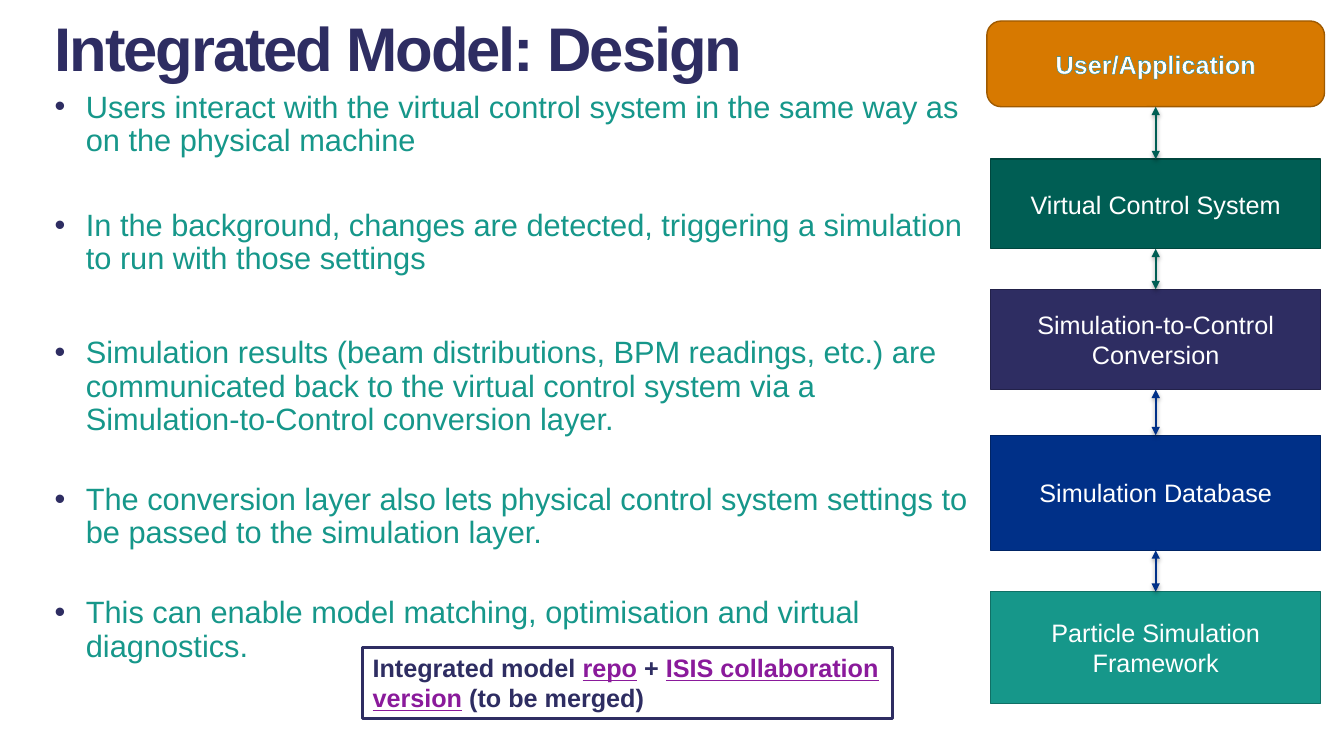
from lxml import etree
from pptx import Presentation
from pptx.dml.color import RGBColor
from pptx.enum.shapes import MSO_CONNECTOR, MSO_SHAPE
from pptx.enum.text import MSO_ANCHOR, MSO_AUTO_SIZE, PP_ALIGN
from pptx.oxml import parse_xml
from pptx.util import Cm, Pt

STRAIGHT = MSO_CONNECTOR.STRAIGHT
RECTANGLE, ROUNDED = MSO_SHAPE.RECTANGLE, MSO_SHAPE.ROUNDED_RECTANGLE
TOP, MIDDLE, BOTTOM = MSO_ANCHOR.TOP, MSO_ANCHOR.MIDDLE, MSO_ANCHOR.BOTTOM
LEFT, CENTER = PP_ALIGN.LEFT, PP_ALIGN.CENTER
NO_FIT = MSO_AUTO_SIZE.NONE

DRAWING = "http://schemas.openxmlformats.org/drawingml/2006/main"
NAVY, TEAL, GREEN, BLUE = "2E2D62", "16978A", "005E54", "003088"
ORANGE, PURPLE, WHITE = "D77900", "8A1A9B", "FFFFFF"

# Text and space before it in points
POINTS = [
    ("Users interact with the virtual control system in the same way as "
     "on the physical machine", 0),
    ("In the background, changes are detected, triggering a simulation "
     "to run with those settings", 37),
    ("Simulation results (beam distributions, BPM readings, etc.) are "
     "communicated back to the virtual control system via a "
     "Simulation-to-Control conversion layer.", 43.5),
    ("The conversion layer also lets physical control system settings to "
     "be passed to the simulation layer.", 33.5),
    ("This can enable model matching, optimisation and virtual "
     "diagnostics.", 33.5),
]

# Text, top and height within the stack in cm, fill, line
LAYERS = [
    ("Virtual Control System", 3.48, 2.26, GREEN, "00463E"),
    ("Simulation-to-Control Conversion", 6.76, 2.53, NAVY, "222149"),
    ("Simulation Database", 10.44, 2.9, BLUE, "002465"),
    ("Particle Simulation Framework", 14.38, 2.82, TEAL, "107066"),
]
ARROW_COLORS = [GREEN, GREEN, BLUE, BLUE]

CALLOUT = [("Integrated model ", False), ("repo", True), (" + ", False),
           ("ISIS collaboration version", True), (" (to be merged)", False)]


def rgb(color):
    return RGBColor.from_string(color)


def xml(body):
    """Parse one DrawingML element, written with the a: prefix."""
    tag, rest = body[:body.index(" ")], body[body.index(" "):]
    return parse_xml(f'{tag} xmlns:a="{DRAWING}"{rest}')


def place(shape, left, top, width, height):
    shape.left, shape.top = Cm(left), Cm(top)
    shape.width, shape.height = Cm(width), Cm(height)


def format_span(span, size, color, bold=False):
    span.font.name, span.font.size, span.font.bold = "Arial", Pt(size), bold
    span.font.color.rgb = rgb(color)


def add_title(page, left, top, width, height):
    title = page.shapes.title
    place(title, left, top, width, height)
    frame = title.text_frame
    frame.text = "Integrated Model: Design"
    frame.auto_size, frame.vertical_anchor = NO_FIT, BOTTOM
    frame.margin_bottom = Cm(0.05)
    para = frame.paragraphs[0]
    para.alignment = LEFT
    span = para.runs[0]
    format_span(span, 44, NAVY, True)
    span.font._element.set("spc", "-150")


def add_points(page, left, top, width, height):
    body = page.placeholders[1]
    place(body, left, top, width, height)
    frame = body.text_frame
    frame.text = "\n".join(text for text, _ in POINTS)
    frame.auto_size, frame.vertical_anchor = NO_FIT, TOP
    for para, (_, gap) in zip(frame.paragraphs, POINTS):
        para.line_spacing, para.space_before = 0.9, Pt(gap)
        props = para._p.get_or_add_pPr()
        props.set("marL", str(Cm(0.79)))
        props.set("indent", str(-Cm(0.79)))
        props.append(xml(f'<a:buClr ><a:srgbClr val="{NAVY}"/></a:buClr>'))
        props.append(xml('<a:buFont typeface="Arial"/>'))
        props.append(xml('<a:buChar char="•"/>'))
        format_span(para.runs[0], 22, TEAL)


def add_block(page, kind, text, box, fill, line):
    block = page.shapes.add_shape(kind, *map(Cm, box))
    block.shadow.inherit = False
    block.fill.solid()
    block.fill.fore_color.rgb = rgb(fill)
    block.line.color.rgb = rgb(line)
    block.line.width = Pt(1)
    frame = block.text_frame
    frame.text = text
    frame.word_wrap, frame.vertical_anchor = True, MIDDLE
    para = frame.paragraphs[0]
    para.alignment = CENTER
    format_span(para.runs[0], 18, WHITE)
    return block


def add_arrow(page, upper, lower, color):
    """Join two stacked blocks with a double-headed, shadowed arrow."""
    middle = lower.left + lower.width // 2
    arrow = page.shapes.add_connector(
        STRAIGHT, middle, upper.top + upper.height, middle, lower.top)
    arrow.line.color.rgb = rgb(color)
    arrow.line.width = Pt(1.5)
    line = arrow.line._get_or_add_ln()
    for end in ("headEnd", "tailEnd"):
        etree.SubElement(line, f"{{{DRAWING}}}{end}", type="triangle")
    arrow._element.spPr.append(xml(
        '<a:effectLst ><a:outerShdw blurRad="40000" dist="23000" '
        'dir="5400000" rotWithShape="0"><a:srgbClr val="000000">'
        '<a:alpha val="35000"/></a:srgbClr></a:outerShdw></a:effectLst>'))


def add_stack(page, left, top, width):
    """Draw the user block, the layers below it and the arrows between."""
    user = add_block(page, ROUNDED, "User/Application",
                     (left, top, width, 2.16), ORANGE, "9F5A00")
    font = user.text_frame.paragraphs[0].runs[0].font
    font.bold = True
    font._element.insert(0, xml(
        '<a:ln w="10160"><a:solidFill><a:srgbClr val="008AAD"/>'
        '</a:solidFill></a:ln>'))
    blocks = [user]
    for text, offset, height, fill, line in LAYERS:
        box = (left + 0.1, top + offset, width - 0.2, height)
        blocks.append(add_block(page, RECTANGLE, text, box, fill, line))
    for upper, lower, color in zip(blocks, blocks[1:], ARROW_COLORS):
        add_arrow(page, upper, lower, color)


def add_callout(page, left, top, width, height):
    callout = page.shapes.add_textbox(*map(Cm, (left, top, width, height)))
    callout.line.color.rgb = rgb(NAVY)
    callout.line.width = Pt(2.25)
    frame = callout.text_frame
    frame.word_wrap = True
    for text, marked in CALLOUT:
        span = frame.paragraphs[0].add_run()
        span.text = text
        format_span(span, 18, PURPLE if marked else NAVY, True)
        span.font.underline = marked


def main():
    deck = Presentation()
    deck.slide_width, deck.slide_height = Cm(33.87), Cm(19.05)
    page = deck.slides.add_slide(deck.slide_layouts[1])
    add_title(page, 1.12, 0.03, 32.46, 2.13)
    add_points(page, 1.12, 2.18, 23.7, 12.09)
    add_stack(page, 24.87, 0.53, 8.51)
    add_callout(page, 9.14, 16.31, 13.36, 1.8)
    deck.save("out.pptx")


if __name__ == "__main__":
    main()
